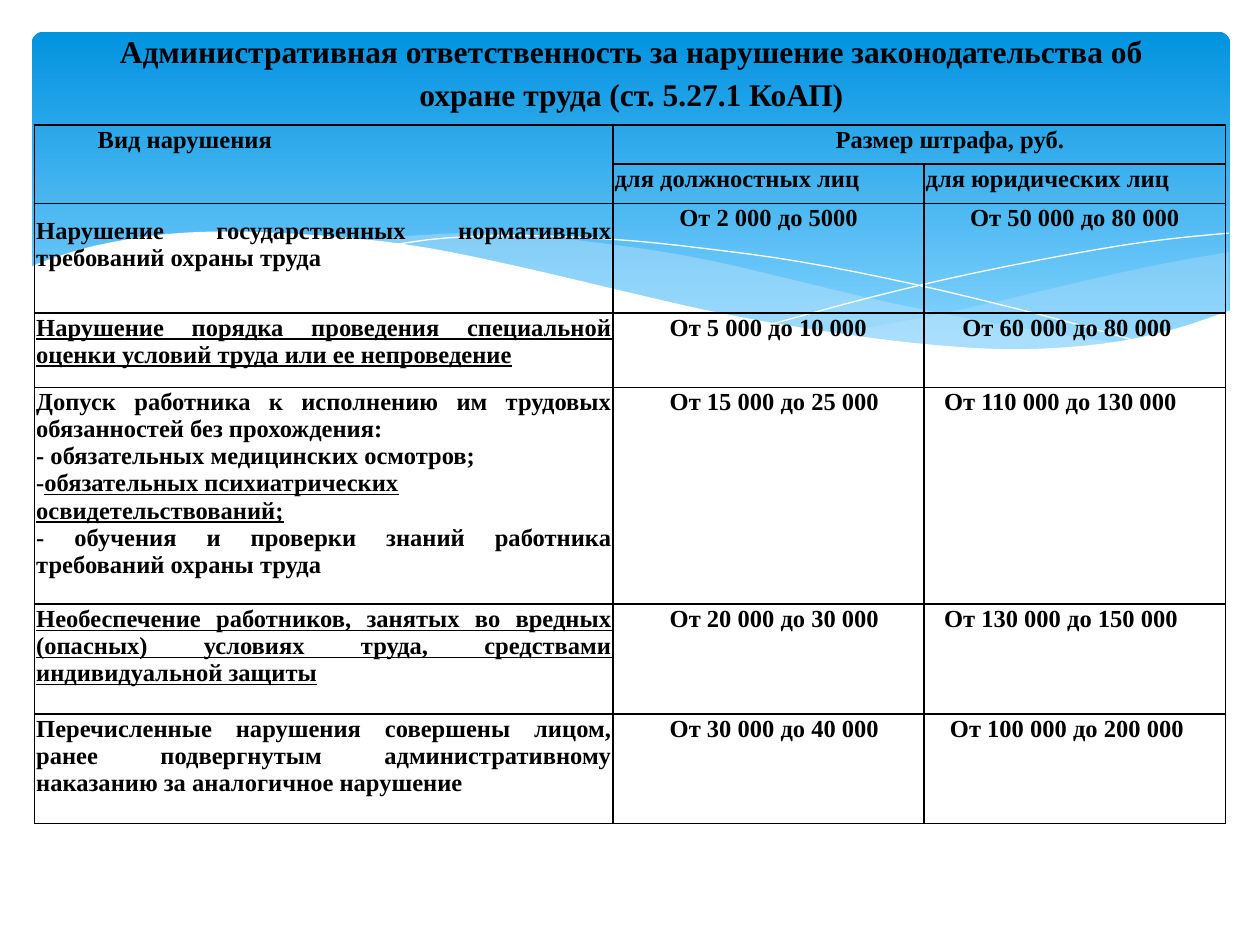
from dataclasses import dataclass
from lxml.etree import SubElement
from pptx import Presentation
from pptx.dml.color import RGBColor as Rgb
from pptx.enum.shapes import MSO_SHAPE as Kind
from pptx.enum.text import MSO_ANCHOR as Anchor, PP_ALIGN as Align
from pptx.oxml.ns import qn
from pptx.util import Cm, Pt


@dataclass(frozen=True)
class Theme:
    face: str = "Times New Roman"
    ink: str = "000000"
    paper: str = "FFFFFF"
    deep: str = "0293E0"
    sky: str = "83D3FE"
    mist: str = "C6E7FC"
    head: int = 18
    body: int = 14
    rule: int = 1
    hair: int = 0


def put(item, **vals):
    for key, val in vals.items():
        setattr(item, key, val)


def bend(knots, steps=4):
    ends = [knots[0], *knots, knots[-1]]
    out = []
    for a, b, c, d in zip(ends, ends[1:], ends[2:], ends[3:]):
        for n in range(steps):
            t = n / steps
            out.append(tuple(
                (2 * q + (r - p) * t + (2 * p - 5 * q + 4 * r - s) * t ** 2
                 + (3 * q - p - 3 * r + s) * t ** 3) / 2
                for p, q, r, s in zip(a, b, c, d)))
    return out + [knots[-1]]


class Deck:
    def __init__(self, theme, slide):
        self.theme = theme
        self.slide = slide

    def card(self, box, round_by):
        card = self.slide.shapes.add_shape(Kind.ROUNDED_RECTANGLE, *map(Cm, box))
        card.adjustments[0] = round_by
        card.shadow.inherit = False
        card.line.fill.background()
        card.fill.gradient()
        card.fill.gradient_angle = 270
        tones = ((0, self.theme.deep), (0.9, self.theme.sky))
        for stop, (place, tone) in zip(card.fill.gradient_stops, tones):
            stop.position = place
            stop.color.rgb = Rgb.from_string(tone)

    def draw(self, dots, close):
        dots = [(Cm(x), Cm(y)) for x, y in dots]
        pen = self.slide.shapes.build_freeform(*dots[0])
        pen.add_line_segments(dots[1:], close=close)
        form = pen.convert_to_shape()
        form.shadow.inherit = False
        return form

    def wave(self, dots, tone, alpha=100):
        form = self.draw(dots, True)
        form.fill.solid()
        form.fill.fore_color.rgb = Rgb.from_string(tone)
        form.line.fill.background()
        if alpha < 100:
            hue = form._element.spPr.find(".//" + qn("a:srgbClr"))
            SubElement(hue, qn("a:alpha"), val=str(alpha * 1000))

    def thread(self, dots):
        form = self.draw(dots, False)
        form.fill.background()
        form.line.color.rgb = Rgb.from_string(self.theme.paper)
        form.line.width = Pt(self.theme.hair)

    def text(self, para, runs, size, align, lead=0, **vals):
        put(para, alignment=align, **vals)
        if lead:
            para._p.get_or_add_pPr().set("indent", str(Cm(lead)))
        for words, under in runs:
            run = para.add_run()
            run.text = words
            put(run.font, name=self.theme.face, size=Pt(size), bold=True, underline=under)
            run.font.color.rgb = Rgb.from_string(self.theme.ink)

    def title(self, box, words):
        frame = self.slide.shapes.add_textbox(*map(Cm, box)).text_frame
        put(frame, word_wrap=True, vertical_anchor=Anchor.MIDDLE)
        self.text(frame.paragraphs[0], [(words, False)], self.theme.head,
                  Align.CENTER, line_spacing=1.15)

    def edge(self, cell):
        props = cell._tc.get_or_add_tcPr()
        for side in "LRTB":
            line = SubElement(props, qn("a:ln" + side), w=str(Pt(self.theme.rule)))
            fill = SubElement(line, qn("a:solidFill"))
            SubElement(fill, qn("a:srgbClr"), val=self.theme.ink)
        cell.fill.background()

    def grid(self, spot, cols, rows):
        size = map(Cm, (*spot, sum(cols), sum(rows)))
        table = self.slide.shapes.add_table(len(rows), len(cols), *size).table
        put(table, first_row=False, horz_banding=False)
        for col, wide in zip(table.columns, cols):
            col.width = Cm(wide)
        for row, high in zip(table.rows, rows):
            row.height = Cm(high)
        pad = Cm(0.03)
        for cell in table.iter_cells():
            put(cell, margin_left=pad, margin_right=pad, margin_top=pad, margin_bottom=pad)
            self.edge(cell)
        return table

    def fill(self, cell, paras, align=Align.JUSTIFY, lead=0):
        frame = cell.text_frame
        for n, runs in enumerate(paras):
            para = frame.add_paragraph() if n else frame.paragraphs[0]
            side = Align.LEFT if len(runs) > 1 else align
            self.text(para, runs, self.theme.body, side, lead)


RIGHT = [
    [(24.77, 5.08), (23.39, 5.33), (21.87, 5.66), (19.79, 6.15), (17.93, 6.53), (16.79, 6.73)],
    [(16.79, 6.73), (17.91, 6.88), (19.23, 7.01), (20.68, 7.06), (22.15, 6.96),
     (23.39, 6.73), (24.1, 6.53), (24.77, 6.27)]]
LEFT = [
    [(22.68, 6.93), (20.5, 6.6), (17.93, 6.1), (15.98, 5.64), (14.45, 5.28),
     (13.06, 5.03), (11.23, 4.8), (9.65, 4.7), (8.33, 4.75), (7.26, 4.85)],
    [(7.26, 4.85), (9.19, 5.16), (11.4, 5.64), (13.46, 6.1), (15.27, 6.48),
     (17.27, 6.81), (18.69, 6.99), (20.5, 7.06), (21.77, 7.04), (22.68, 6.93)]]
FALL = [(7.85, 4.95), (8.97, 4.8), (10.57, 4.75), (12.42, 4.83), (14.12, 5),
        (16.15, 5.28), (18.47, 5.74), (21.11, 6.38), (23.04, 6.91)]
RISE = [(15.57, 6.53), (17.65, 5.97), (19.71, 5.49), (22, 5.05), (23.47, 4.83), (24.77, 4.7)]
SHORE = [(24.82, 6.25), (23.62, 6.65), (22.23, 6.93), (20.55, 7.04), (18.9, 6.96),
         (16.97, 6.73), (14.71, 6.35), (12.78, 5.92), (10.62, 5.41), (8.64, 5),
         (6.88, 4.78), (4.9, 4.67), (3.35, 4.72), (1.93, 4.95), (0.91, 5.26), (0.58, 5.41)]
BASE = [(0.58, 8.36), (24.82, 8.36)]

FINES = [
    ([[("Нарушение государственных нормативных требований охраны труда", False)]],
     ("От 2 000 до 5000", 0), ("От 50 000 до 80 000", 0)),
    ([[("Нарушение порядка проведения специальной оценки условий труда "
        "или ее непроведение", True)]],
     ("От 5 000 до 10 000", 1.11), ("От 60 000 до 80 000", 0.74)),
    ([[("Допуск работника к исполнению им трудовых обязанностей без прохождения:", False)],
      [("- обязательных медицинских осмотров;", False)],
      [("-", False), ("обязательных психиатрических освидетельствований;", True)],
      [("- обучения и проверки знаний работника требований охраны труда", False)]],
     ("От 15 000 до 25 000", 1.11), ("От 110 000 до 130 000", 0.37)),
    ([[("Необеспечение работников, занятых во вредных (опасных) условиях труда, "
        "средствами индивидуальной защиты", True)]],
     ("От 20 000 до 30 000", 1.11), ("От 130 000 до 150 000", 0.37)),
    ([[("Перечисленные нарушения совершены лицом, ранее подвергнутым "
        "административному наказанию за аналогичное нарушение", False)]],
     ("От 30 000 до 40 000", 1.11), ("От 100 000 до 200 000", 0.49))]


def main():
    show = Presentation()
    put(show, slide_width=Cm(25.4), slide_height=Cm(19.05))
    theme = Theme()
    deck = Deck(theme, show.slides.add_slide(show.slide_layouts[6]))

    deck.card((0.64, 0.64, 24.16, 6.86), 0.034)
    for (top, low), alpha in ((RIGHT, 29), (LEFT, 40)):
        deck.wave(bend(top) + bend(low)[1:], theme.mist, alpha)
    for knots in (FALL, RISE):
        deck.thread(bend(knots))
    deck.wave(bend(SHORE) + BASE, theme.paper)

    deck.title((1.3, 0.91, 22.86, 0.99),
               "Административная ответственность за нарушение законодательства "
               "об охране труда (ст. 5.27.1 КоАП)")

    table = deck.grid((0.7, 2.52), (11.66, 6.27, 6.07),
                      (0.79, 0.79, 2.21, 1.5, 4.37, 2.21, 2.21))
    at = table.cell
    at(0, 0).merge(at(1, 0))
    at(0, 1).merge(at(0, 2))
    deck.fill(at(0, 0), [[("Вид нарушения", False)]], lead=1.24)
    deck.fill(at(0, 1), [[("Размер штрафа, руб.", False)]], Align.CENTER, 1.24)
    for col, words in enumerate(("для должностных лиц", "для юридических лиц"), 1):
        deck.fill(at(1, col), [[(words, False)]])
    for row, (fault, *sums) in enumerate(FINES, 2):
        deck.fill(at(row, 0), fault)
        for col, (words, lead) in enumerate(sums, 1):
            align = Align.JUSTIFY if lead else Align.CENTER
            deck.fill(at(row, col), [[(words, False)]], align, lead)
    put(at(2, 0), vertical_anchor=Anchor.MIDDLE, margin_bottom=Cm(0.57))

    show.save("out.pptx")


if __name__ == "__main__":
    main()
